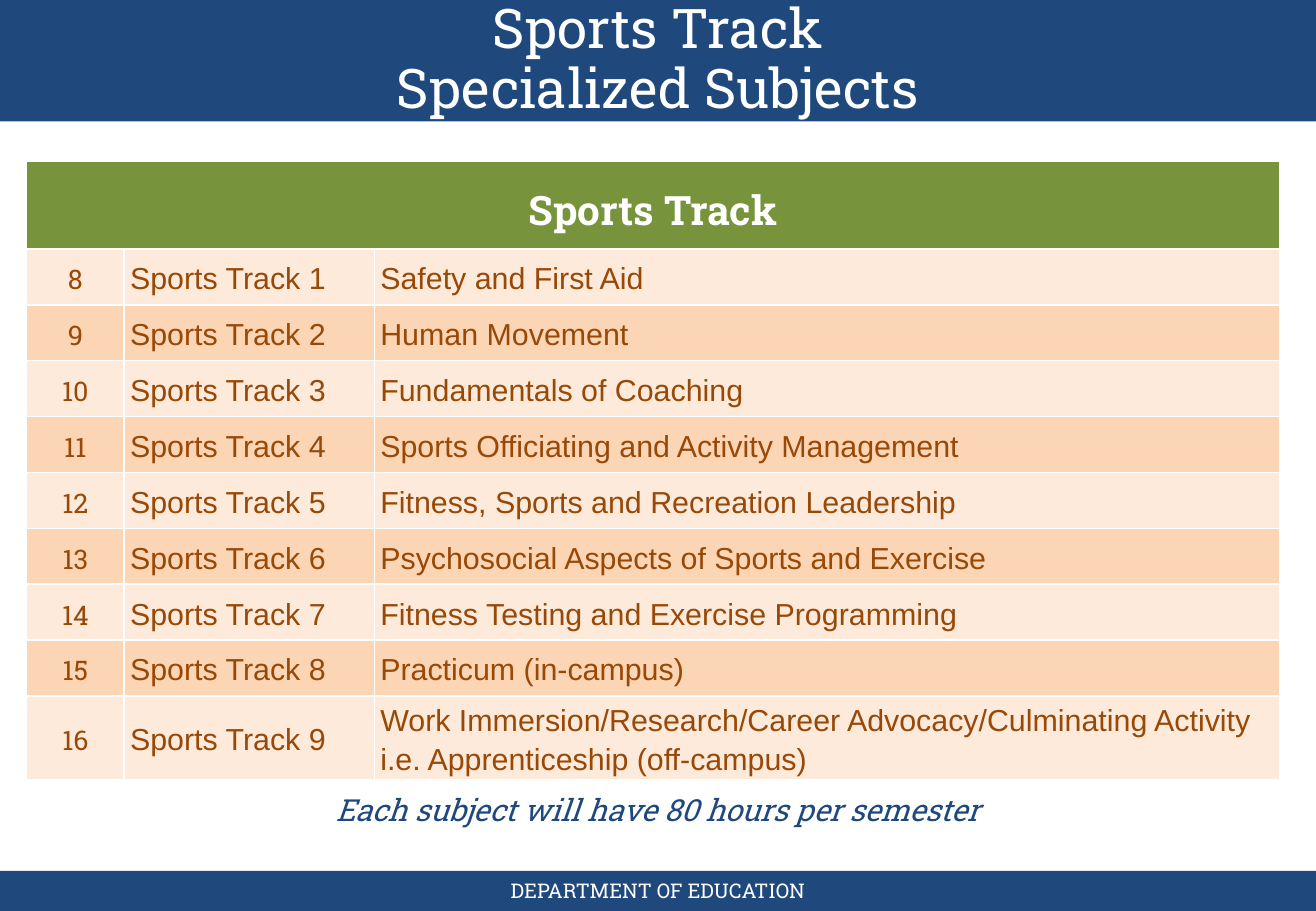
from dataclasses import dataclass

from lxml.etree import SubElement
from pptx import Presentation
from pptx.dml.color import RGBColor
from pptx.enum.shapes import MSO_SHAPE
from pptx.enum.text import MSO_ANCHOR, PP_ALIGN
from pptx.oxml.ns import qn
from pptx.util import Emu, Pt

PX = 9144  # EMU per px, 100 px to the inch
SERIF, SANS = "Roboto Slab", "Arial"
COLORS = {
    "navy": "1F497D", "white": "FFFFFF", "green": "77933C",
    "brown": "984807", "light": "FDEADA", "dark": "FCD5B5",
}


@dataclass
class Bar:
    top: int
    height: int


@dataclass
class Label:
    text: str
    left: int
    top: int
    width: int
    height: int
    size: float
    color: str
    italic: bool = False
    spacing: float = 1.0


@dataclass
class CellStyle:
    font: str
    size: int
    color: str
    inset: int
    centered: bool = False
    bold: bool = False


BARS = [Bar(0, 100), Bar(717, 33)]
LABELS = [
    Label("Sports Track\vSpecialized Subjects", 54, 0, 975, 100, 32.4, "white", spacing=0.92),
    Label("Each subject will have 80 hours per semester", 45, 625, 993, 83, 18, "navy", italic=True),
    Label("DEPARTMENT OF EDUCATION", 54, 717, 975, 33, 12, "white"),
]
HEADER = CellStyle(SERIF, 24, "white", 4, centered=True, bold=True)
NUMBER = CellStyle(SERIF, 16, "brown", 4, centered=True)
BODY = CellStyle(SANS, 18, "brown", 5)

FIRST_NUMBER = 8
SUBJECTS = [
    "Safety and First Aid",
    "Human Movement",
    "Fundamentals of Coaching",
    "Sports Officiating and Activity Management",
    "Fitness, Sports and Recreation Leadership",
    "Psychosocial Aspects of Sports and Exercise",
    "Fitness Testing and Exercise Programming",
    "Practicum (in-campus)",
    "Work Immersion/Research/Career Advocacy/Culminating Activity\n"
    "i.e. Apprenticeship (off-campus)",
]
COLUMNS = [80, 206, 745]
HEADER_HEIGHT, ROW_HEIGHT = 72, 46
HANGING = 38


def px(n: int) -> Emu:
    return Emu(n * PX)


def rgb(name: str) -> RGBColor:
    return RGBColor.from_string(COLORS[name])


def add_bar(slide, bar: Bar) -> None:
    s = slide.shapes.add_shape(MSO_SHAPE.RECTANGLE, 0, px(bar.top), px(1083), px(bar.height))
    s.shadow.inherit = False
    s.fill.solid()
    s.fill.fore_color.rgb = rgb("navy")
    s.line.fill.background()


def add_label(slide, label: Label) -> None:
    s = slide.shapes.add_textbox(px(label.left), px(label.top), px(label.width), px(label.height))
    tf = s.text_frame
    tf.word_wrap = True
    tf.vertical_anchor = MSO_ANCHOR.MIDDLE
    p = tf.paragraphs[0]
    p.text = label.text
    p.alignment = PP_ALIGN.CENTER
    p.line_spacing = label.spacing
    p.font.name = SERIF
    p.font.size = Pt(label.size)
    p.font.italic = label.italic
    p.font.color.rgb = rgb(label.color)


def add_borders(cell) -> None:
    tc_pr = cell._tc.get_or_add_tcPr()
    for i, side in enumerate(("a:lnL", "a:lnR", "a:lnT", "a:lnB")):
        ln = SubElement(tc_pr, qn(side), w=str(Pt(1)))
        fill = SubElement(ln, qn("a:solidFill"))
        SubElement(fill, qn("a:srgbClr"), val=COLORS["white"])
        tc_pr.remove(ln)
        tc_pr.insert(i, ln)  # borders come before the fill


def fill_cell(cell, text: str, style: CellStyle, fill: str) -> None:
    cell.fill.solid()
    cell.fill.fore_color.rgb = rgb(fill)
    add_borders(cell)
    cell.margin_left = cell.margin_right = px(style.inset)
    cell.margin_top = cell.margin_bottom = 0
    cell.vertical_anchor = MSO_ANCHOR.MIDDLE
    cell.text_frame.text = text
    for p in cell.text_frame.paragraphs:
        p.line_spacing = 1.15
        p.font.name = style.font
        p.font.size = Pt(style.size)
        p.font.bold = style.bold
        p.font.color.rgb = rgb(style.color)
        if style.centered:
            p.alignment = PP_ALIGN.CENTER
            p_pr = p._p.get_or_add_pPr()
            p_pr.set("marL", str(px(HANGING)))
            p_pr.set("indent", str(px(-HANGING)))


def add_subjects(slide) -> None:
    height = HEADER_HEIGHT + ROW_HEIGHT * len(SUBJECTS)
    table = slide.shapes.add_table(
        len(SUBJECTS) + 1, len(COLUMNS), px(22), px(133), px(sum(COLUMNS)), px(height)
    ).table
    table.first_row = table.horz_banding = False
    for column, width in zip(table.columns, COLUMNS):
        column.width = px(width)
    for i, row in enumerate(table.rows):
        row.height = px(ROW_HEIGHT if i else HEADER_HEIGHT)

    # Header across all columns
    table.cell(0, 0).merge(table.cell(0, len(COLUMNS) - 1))
    fill_cell(table.cell(0, 0), "Sports Track", HEADER, "green")

    # Numbered subjects in alternating bands
    for i, subject in enumerate(SUBJECTS, start=1):
        band = "light" if i % 2 else "dark"
        fill_cell(table.cell(i, 0), str(FIRST_NUMBER + i - 1), NUMBER, band)
        fill_cell(table.cell(i, 1), f"Sports Track {i}", BODY, band)
        fill_cell(table.cell(i, 2), subject, BODY, band)


def main() -> None:
    prs = Presentation()
    prs.slide_width, prs.slide_height = px(1083), px(750)
    slide = prs.slides.add_slide(prs.slide_layouts[6])

    # Title and footer bars, then their text and the note
    for bar in BARS:
        add_bar(slide, bar)
    for label in LABELS:
        add_label(slide, label)

    add_subjects(slide)
    prs.save("out.pptx")


if __name__ == "__main__":
    main()
